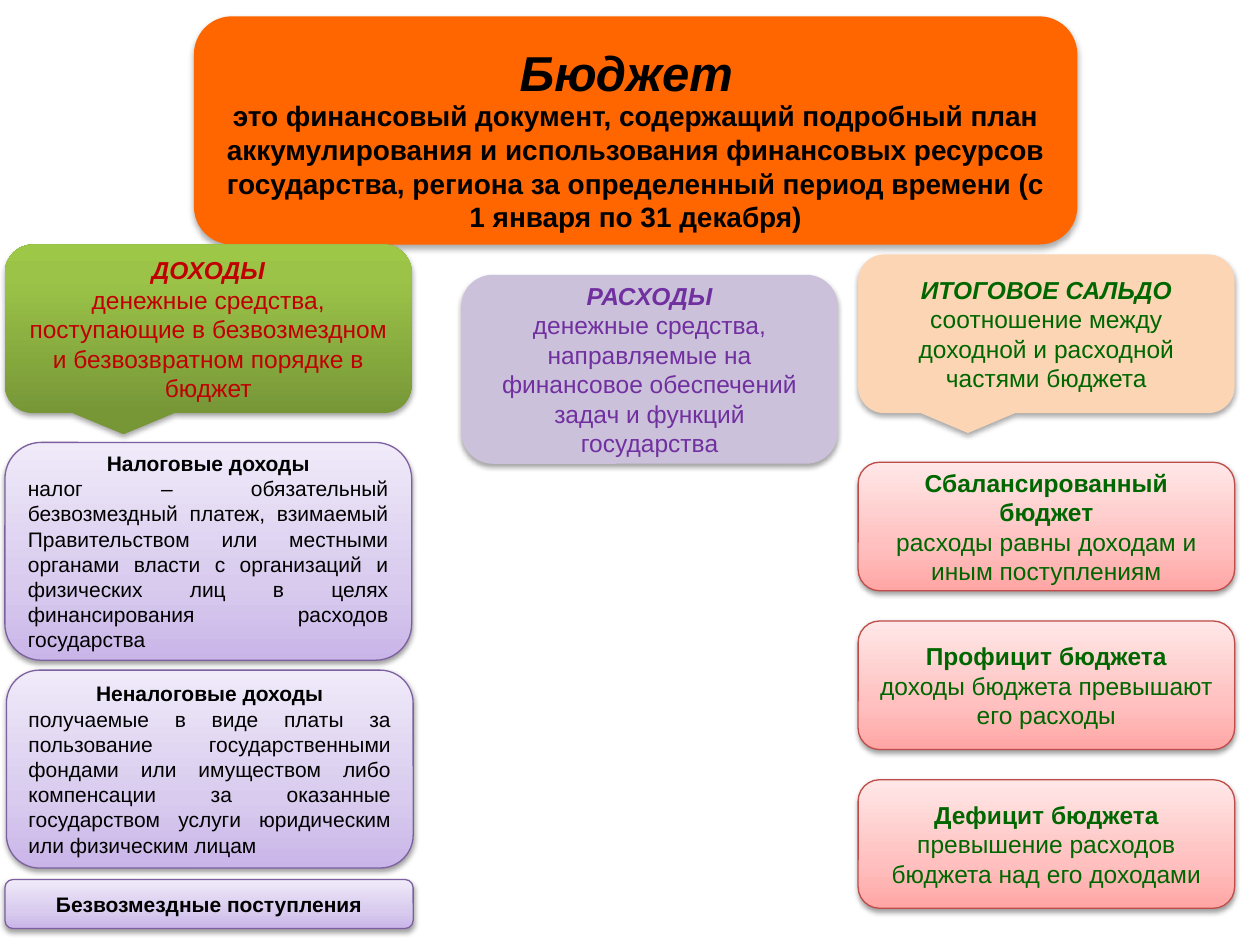
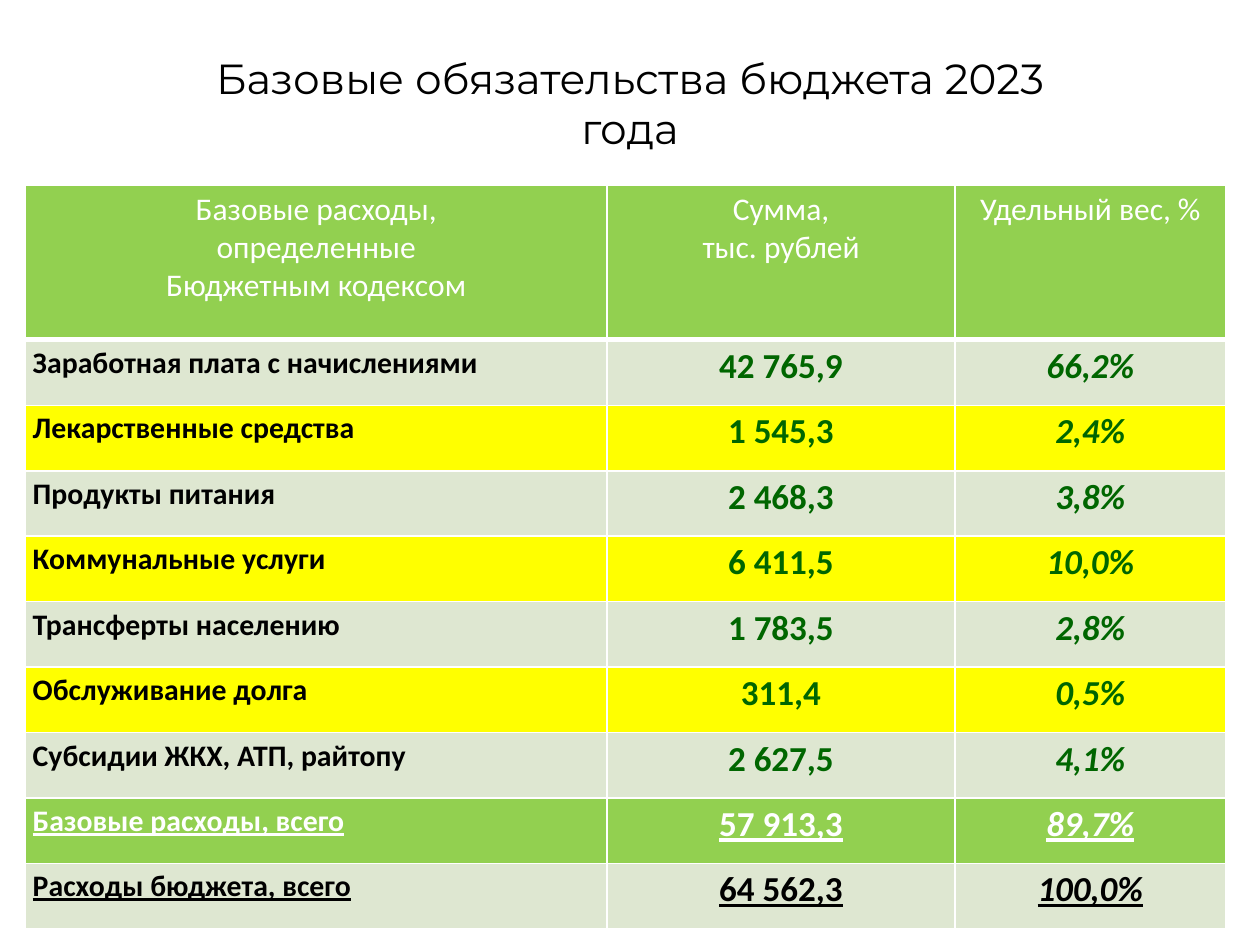
from copy import deepcopy
from dataclasses import dataclass
from typing import NamedTuple

from lxml import etree
from pptx import Presentation
from pptx.dml.color import RGBColor
from pptx.enum import shapes, text
from pptx.oxml import ns
from pptx.util import Cm, Pt

BLACK = RGBColor(0x00, 0x00, 0x00)
WHITE = RGBColor(0xFF, 0xFF, 0xFF)
ORANGE = RGBColor(0xFF, 0x66, 0x00)
RED = RGBColor(0xC0, 0x00, 0x00)
PURPLE = RGBColor(0x70, 0x30, 0xA0)
DARK_GREEN = RGBColor(0x00, 0x66, 0x00)
LILAC = RGBColor(0xCC, 0xC1, 0xDA)
PEACH = RGBColor(0xFC, 0xD5, 0xB5)
LIME = RGBColor(0x92, 0xD0, 0x50)
YELLOW = RGBColor(0xFF, 0xFF, 0x00)
PALE_GREEN = RGBColor(0xDE, 0xE7, 0xD1)
VIOLET_LINE = RGBColor(0x7D, 0x60, 0xA0)
PINK_LINE = RGBColor(0xBF, 0x4C, 0x48)

# Gradient stops run from the bottom of a shape to its top.
GREEN_FADE = ((0, RGBColor(0x77, 0x97, 0x37)), (0.8, RGBColor(0x9B, 0xC3, 0x48)),
              (1, RGBColor(0x9D, 0xC7, 0x46)))
VIOLET_FADE = ((0, RGBColor(0xC9, 0xB5, 0xE8)), (0.35, RGBColor(0xD8, 0xCB, 0xEE)),
               (1, RGBColor(0xF0, 0xEA, 0xF9)))
PINK_FADE = ((0, RGBColor(0xFF, 0xA6, 0xA5)), (0.35, RGBColor(0xFF, 0xC0, 0xBF)),
             (1, RGBColor(0xFF, 0xE7, 0xE7)))

CENTER = text.PP_ALIGN.CENTER
JUSTIFY = text.PP_ALIGN.JUSTIFY
ROUNDED = shapes.MSO_SHAPE.ROUNDED_RECTANGLE
CALLOUT = shapes.MSO_SHAPE.ROUNDED_RECTANGULAR_CALLOUT


class Area(NamedTuple):
    """Left, top, width and height in centimetres."""
    left: float
    top: float
    width: float
    height: float

    def lengths(self) -> list[Cm]:
        return [Cm(value) for value in self]


class Shadow(NamedTuple):
    opacity: int
    blur: float
    distance: float


@dataclass(frozen=True)
class Style:
    fill: RGBColor | tuple
    ink: RGBColor
    size: int = 14
    italic: bool = True
    bold_body: bool = False
    body_align: text.PP_ALIGN = CENTER
    outline: RGBColor | None = None
    shadow: Shadow = Shadow(35, 3.1, 1.8)


@dataclass(frozen=True)
class Card:
    area: Area
    style: Style
    heading: str = ""
    body: str = ""
    form: shapes.MSO_SHAPE = ROUNDED


class Row(NamedTuple):
    label: str
    amount: str
    share: str
    fill: RGBColor
    label_ink: RGBColor = BLACK
    value_ink: RGBColor = DARK_GREEN
    underline: bool = False


EDGE_SHADOW = Shadow(38, 3.1, 1.6)
DEFINITION = Style(ORANGE, BLACK, size=16, bold_body=True, shadow=Shadow(32, 3.5, 2.2))
INCOME = Style(GREEN_FADE, RED)
SPENDING = Style(LILAC, PURPLE)
BALANCE = Style(PEACH, DARK_GREEN)
INCOME_KIND = Style(VIOLET_FADE, BLACK, size=12, italic=False, body_align=JUSTIFY,
                    outline=VIOLET_LINE, shadow=EDGE_SHADOW)
BALANCE_KIND = Style(PINK_FADE, DARK_GREEN, italic=False, outline=PINK_LINE,
                     shadow=EDGE_SHADOW)

DEFINITION_CARD = Card(
    Area(3.91, 0.33, 17.81, 4.6), DEFINITION,
    body="это финансовый документ, содержащий подробный план аккумулирования и "
         "использования финансовых ресурсов государства, региона за определенный "
         "период времени (с 1 января по 31 декабря)")
CARDS = [
    Card(Area(0.1, 4.93, 8.2, 3.4), INCOME, "ДОХОДЫ",
         "денежные средства, поступающие в безвозмездном и безвозвратном порядке "
         "в бюджет", CALLOUT),
    Card(Area(0.13, 13.51, 8.2, 3.99), INCOME_KIND, "Неналоговые доходы",
         "получаемые в виде платы за пользование государственными фондами или "
         "имуществом либо компенсации за оказанные государством услуги "
         "юридическим или физическим лицам"),
    Card(Area(0.1, 8.92, 8.2, 4.39), INCOME_KIND, "Налоговые доходы",
         "налог – обязательный безвозмездный платеж, взимаемый Правительством или "
         "местными органами власти с организаций и физических лиц в целях "
         "финансирования расходов государства"),
    Card(Area(0.1, 17.73, 8.23, 0.99), INCOME_KIND, "Безвозмездные поступления"),
    Card(Area(9.3, 5.54, 7.59, 3.81), SPENDING, "РАСХОДЫ",
         "денежные средства, направляемые на финансовое обеспечений задач и "
         "функций государства"),
    Card(Area(17.3, 5.13, 7.59, 3.2), BALANCE, "ИТОГОВОЕ САЛЬДО",
         "соотношение между доходной и расходной частями бюджета", CALLOUT),
]
BALANCE_KINDS = [
    ("Сбалансированный бюджет", "расходы равны доходам и иным поступлениям"),
    ("Профицит бюджета", "доходы бюджета превышают его расходы"),
    ("Дефицит бюджета", "превышение расходов бюджета над его доходами"),
]
BALANCE_STEP = 3.2

HEADERS = [["Базовые расходы,", "определенные", "Бюджетным кодексом"],
           ["Сумма,", "тыс. рублей"], ["Удельный вес, %"]]
ROWS = [
    Row("Заработная плата с начислениями", "42 765,9", "66,2%", PALE_GREEN),
    Row("Лекарственные средства", "1 545,3", "2,4%", YELLOW),
    Row("Продукты питания", "2 468,3", "3,8%", PALE_GREEN),
    Row("Коммунальные услуги", "6 411,5", "10,0%", YELLOW),
    Row("Трансферты населению", "1 783,5", "2,8%", PALE_GREEN),
    Row("Обслуживание долга", "311,4", "0,5%", YELLOW),
    Row("Субсидии ЖКХ, АТП, райтопу", "2 627,5", "4,1%", PALE_GREEN),
    Row("Базовые расходы, всего", "57 913,3", "89,7%", LIME, WHITE, WHITE, True),
    Row("Расходы бюджета, всего", "64 562,3", "100,0%", PALE_GREEN, BLACK, BLACK, True),
]
COLUMN_WIDTHS = (11.73, 7.01, 5.46)
HEADER_HEIGHT = 3.12
ROW_HEIGHT = 1.32


def add_span(para, words: str, font: str, size: int, ink: RGBColor, bold=False,
             italic=False, underline=False, align=CENTER) -> None:
    para.alignment = align
    span = para.add_run()
    span.text = words
    span.font.name = font
    span.font.size = Pt(size)
    span.font.color.rgb = ink
    span.font.bold, span.font.italic, span.font.underline = bold, italic, underline


def next_para(frame, index: int):
    return frame.add_paragraph() if index else frame.paragraphs[0]


def place_title(page, area: Area, words: str, font: str, size: int, **looks) -> None:
    title = page.shapes.title
    title.left, title.top, title.width, title.height = area.lengths()
    frame = title.text_frame
    frame.word_wrap = True
    frame.auto_size = text.MSO_AUTO_SIZE.NONE
    frame.vertical_anchor = text.MSO_ANCHOR.MIDDLE
    add_span(frame.paragraphs[0], words, font, size, BLACK, **looks)
    title.element.getparent().append(title.element)


def paint(box, fill) -> None:
    """Fill a shape with one colour or with a three-stop vertical gradient."""
    if isinstance(fill, RGBColor):
        box.fill.solid()
        box.fill.fore_color.rgb = fill
        return
    box.fill.gradient()
    box.fill.gradient_angle = 90
    stop_list = box.element.spPr.find(f".//{ns.qn('a:gsLst')}")
    stop_list.append(deepcopy(stop_list[-1]))
    for stop, (position, color) in zip(box.fill.gradient_stops, fill):
        stop.position = position
        stop.color.rgb = color


def cast_shadow(box, shadow: Shadow) -> None:
    box.shadow.inherit = False
    effects = box.element.spPr.find(ns.qn("a:effectLst"))
    outer = etree.SubElement(
        effects, ns.qn("a:outerShdw"), blurRad=str(Pt(shadow.blur)),
        dist=str(Pt(shadow.distance)), dir="5400000", rotWithShape="0")
    color = etree.SubElement(outer, ns.qn("a:srgbClr"), val=str(BLACK))
    etree.SubElement(color, ns.qn("a:alpha"), val=str(shadow.opacity * 1000))


def add_card(page, card: Card):
    style = card.style
    box = page.shapes.add_shape(card.form, *card.area.lengths())
    paint(box, style.fill)
    if style.outline is None:
        box.line.fill.background()
    else:
        box.line.color.rgb = style.outline
        box.line.width = Pt(0.75)
    cast_shadow(box, style.shadow)
    frame = box.text_frame
    frame.word_wrap = True
    frame.vertical_anchor = text.MSO_ANCHOR.MIDDLE
    parts = [(card.heading, True, style.italic, CENTER),
             (card.body, style.bold_body, False, style.body_align)]
    for index, (words, bold, italic, align) in enumerate(p for p in parts if p[0]):
        add_span(next_para(frame, index), words, "Arial", style.size, style.ink,
                 bold, italic, align=align)
    return box


def format_cell(cell, fill: RGBColor, bottom_line: int = 1) -> None:
    """Set the insets, white borders and fill of a table cell."""
    cell.margin_left = cell.margin_right = Cm(0.15)
    cell.margin_top = cell.margin_bottom = Cm(0.1)
    properties = cell._tc.get_or_add_tcPr()
    for side in "LRTB":
        width = bottom_line if side == "B" else 1
        line = etree.SubElement(properties, ns.qn(f"a:ln{side}"), w=str(Pt(width)))
        solid = etree.SubElement(line, ns.qn("a:solidFill"))
        etree.SubElement(solid, ns.qn("a:srgbClr"), val=str(WHITE))
    cell.fill.solid()
    cell.fill.fore_color.rgb = fill


def add_spending_table(page) -> None:
    area = Area(0.51, 3.73, sum(COLUMN_WIDTHS), HEADER_HEIGHT + ROW_HEIGHT * len(ROWS))
    table = page.shapes.add_table(len(ROWS) + 1, len(HEADERS), *area.lengths()).table
    table.horz_banding = False
    for column, width in zip(table.columns, COLUMN_WIDTHS):
        column.width = Cm(width)
    for index, line in enumerate(table.rows):
        line.height = Cm(ROW_HEIGHT if index else HEADER_HEIGHT)

    for cell, lines in zip(table.rows[0].cells, HEADERS):
        format_cell(cell, LIME, bottom_line=3)
        for index, words in enumerate(lines):
            add_span(next_para(cell.text_frame, index), words, "Calibri", 18, WHITE)

    for number, row in enumerate(ROWS, start=1):
        spans = [(row.label, 17, row.label_ink, False, text.PP_ALIGN.LEFT),
                 (row.amount, 20, row.value_ink, False, CENTER),
                 (row.share, 20, row.value_ink, True, CENTER)]
        for cell, (words, size, ink, italic, align) in zip(table.rows[number].cells, spans):
            format_cell(cell, row.fill)
            add_span(cell.text_frame.paragraphs[0], words, "Calibri", size, ink, True,
                     italic, row.underline, align)


def build_budget_page(page) -> None:
    definition = add_card(page, DEFINITION_CARD)
    definition.text_frame.vertical_anchor = text.MSO_ANCHOR.BOTTOM
    definition.text_frame.margin_bottom = Cm(0)
    for card in CARDS:
        add_card(page, card)
    for index, (heading, body) in enumerate(BALANCE_KINDS):
        area = Area(17.3, 9.32 + index * BALANCE_STEP, 7.59, 2.59)
        add_card(page, Card(area, BALANCE_KIND, heading, body))
    place_title(page, Area(3.72, 0.69, 17.81, 1.52), "Бюджет", "Arial", 28,
                bold=True, italic=True)


def build_obligations_page(page) -> None:
    place_title(page, Area(4.04, 0.91, 17.32, 2.31),
                "Базовые обязательства бюджета 2023 года", "Montserrat", 24)
    add_spending_table(page)


def main() -> None:
    deck = Presentation()
    deck.slide_width, deck.slide_height = Cm(25.4), Cm(19.05)
    title_only = deck.slide_layouts.get_by_name("Title Only")
    for build in (build_budget_page, build_obligations_page):
        build(deck.slides.add_slide(title_only))
    deck.save("out.pptx")


if __name__ == "__main__":
    main()
